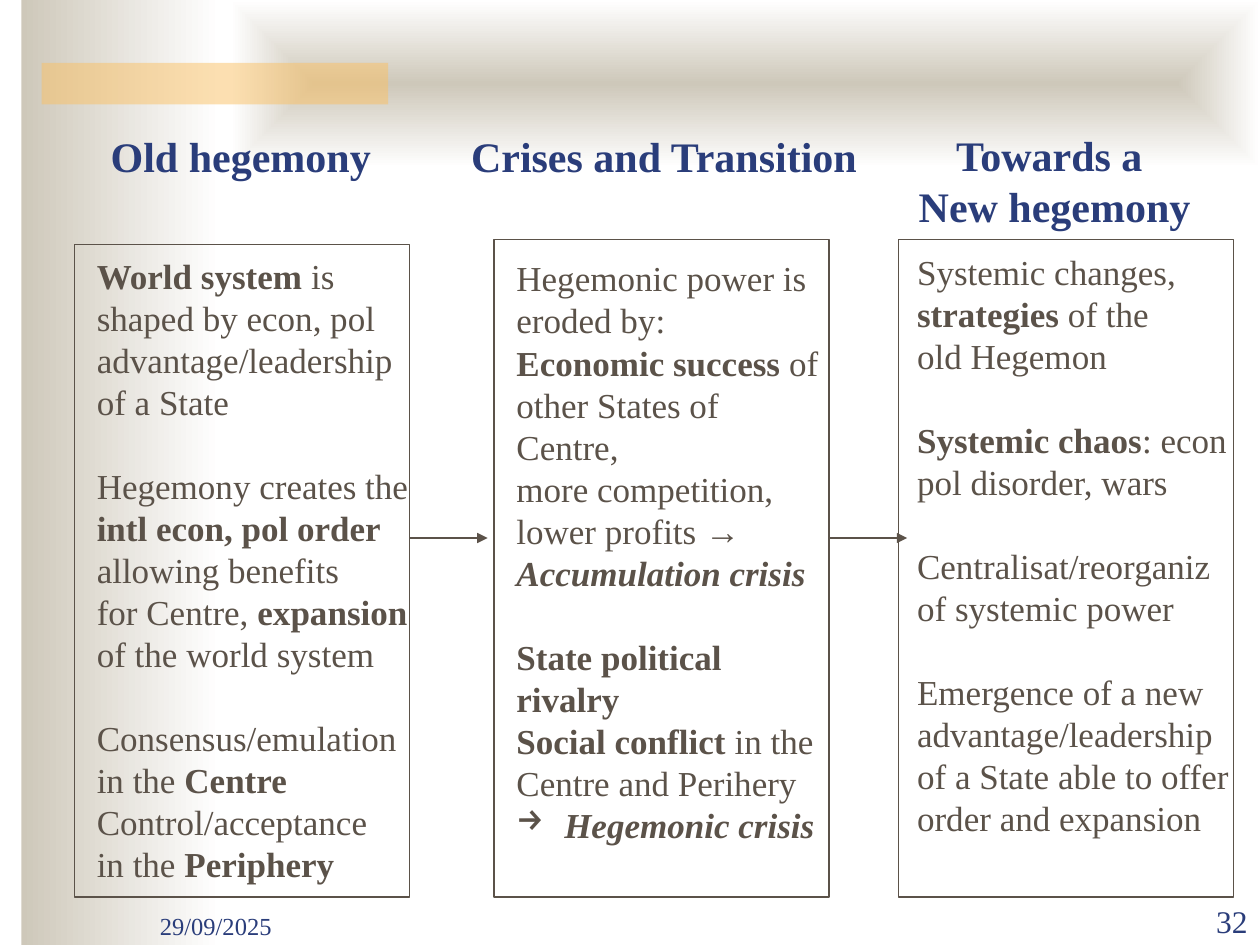
from lxml.etree import SubElement
from pptx import Presentation
from pptx.dml.color import RGBColor
from pptx.enum.shapes import MSO_CONNECTOR as CONNECTOR, MSO_SHAPE as SHAPE
from pptx.enum.text import MSO_ANCHOR as ANCHOR, MSO_AUTO_SIZE as AUTO_SIZE, PP_ALIGN as ALIGN
from pptx.oxml.ns import qn
from pptx.util import Inches, Pt

FONT = "Times New Roman"
NAVY = RGBColor(0x2A, 0x3D, 0x7A)
BROWN = RGBColor(0x5B, 0x52, 0x49)
STONE = RGBColor(0xCE, 0xC8, 0xBA)
WHITE = RGBColor(0xFF, 0xFF, 0xFF)
AMBER = RGBColor(0xFA, 0xC1, 0x64)

BULLET = "→ "
BULLET_INDENT = Inches(0.38)

# Each column is a list of groups of lines; *bold*, *~bold italic*
OLD_HEGEMONY = [
    ["*World system *is", "shaped by econ, pol", "advantage/leadership", "of a State"],
    ["Hegemony creates the", "*intl econ, pol order*", "allowing benefits",
     "for Centre, *expansion*", "of the world system"],
    ["Consensus/emulation", "in the *Centre*", "Control/acceptance", "in the *Periphery*"],
]
CRISES = [
    ["Hegemonic power is", "eroded by:", "*Economic success *of", "other States of Centre,",
     "more competition,", "lower profits →", "*~Accumulation crisis*"],
    ["*State political rivalry*", "*Social conflict *in the", "Centre and Perihery",
     BULLET + "*~Hegemonic crisis*"],
]
NEW_HEGEMONY = [
    ["Systemic changes,", "*strategies* of the", "old Hegemon"],
    ["*Systemic chaos*: econ", "pol disorder, wars"],
    ["Centralisat/reorganiz", "of systemic power"],
    ["Emergence of a new", "advantage/leadership", "of a State able to offer",
     "order and expansion"],
]


def add_panel(slide, at, line=None):
    panel = slide.shapes.add_shape(SHAPE.RECTANGLE, *map(Inches, at))
    panel.shadow.inherit = False
    panel.fill.background()
    if line is None:
        panel.line.fill.background()
    else:
        panel.line.color.rgb = line
        panel.line.width = Pt(0.75)
    return panel


def add_gradient(slide, at, from_centre=False):
    panel = add_panel(slide, at)
    panel.fill.gradient()
    panel.fill.gradient_angle = 0
    for stop, color in zip(panel.fill.gradient_stops, (STONE, WHITE)):
        stop.color.rgb = color
    if from_centre:
        grad = panel.element.spPr.find(qn("a:gradFill"))
        grad.remove(grad.find(qn("a:lin")))
        outline = SubElement(grad, qn("a:path"), {"path": "shape"})
        SubElement(outline, qn("a:fillToRect"), dict.fromkeys("ltrb", "50000"))


def add_accent_bar(slide, at):
    bar = add_panel(slide, at)
    bar.fill.solid()
    bar.fill.fore_color.rgb = AMBER
    color = bar.element.spPr.find(qn("a:solidFill"))[0]
    SubElement(color, qn("a:alpha"), {"val": "50000"})


def add_arrow(slide, start_x, end_x, y):
    arrow = slide.shapes.add_connector(
        CONNECTOR.STRAIGHT, Inches(start_x), Inches(y), Inches(end_x), Inches(y))
    arrow.line.color.rgb = BROWN
    arrow.line.width = Pt(0.75)
    SubElement(arrow.line._get_or_add_ln(), qn("a:tailEnd"), {"type": "triangle"})
    SubElement(arrow.element.spPr, qn("a:effectLst"))


def add_bullet(paragraph):
    properties = paragraph._p.get_or_add_pPr()
    properties.set("marL", str(BULLET_INDENT))
    properties.set("indent", str(-BULLET_INDENT))
    SubElement(properties, qn("a:buChar"), {"char": BULLET.strip()})


def add_text(slide, at, groups, size=20, color=BROWN, align=ALIGN.LEFT,
             anchor=ANCHOR.TOP, wrap=False, grow=True):
    box = slide.shapes.add_textbox(*map(Inches, at))
    frame = box.text_frame
    frame.word_wrap = wrap
    frame.auto_size = AUTO_SIZE.SHAPE_TO_FIT_TEXT if grow else AUTO_SIZE.NONE
    frame.vertical_anchor = anchor
    paragraph = None
    for group in groups:
        for index, line in enumerate(group):
            is_first = paragraph is None
            paragraph = frame.paragraphs[0] if is_first else frame.add_paragraph()
            if line.startswith(BULLET):
                add_bullet(paragraph)
                line = line.removeprefix(BULLET)
            paragraph.alignment = align
            if index == 0 and not is_first:
                paragraph.space_before = Pt(size * 1.2)
            for position, part in enumerate(line.split("*")):
                if not part:
                    continue
                run = paragraph.add_run()
                run.text = part.removeprefix("~")
                run.font.name = FONT
                run.font.size = Pt(size)
                run.font.color.rgb = color
                run.font.bold = position % 2 == 1
                run.font.italic = part.startswith("~")


def main():
    deck = Presentation()
    deck.slide_width, deck.slide_height = Inches(10), Inches(7.5)
    slide = deck.slides.add_slide(deck.slide_layouts[6])

    # Background decoration
    add_gradient(slide, (0.17, 0, 1.58, 7.5))
    add_gradient(slide, (1.83, 0, 8.17, 1.33), from_centre=True)
    add_accent_bar(slide, (0.33, 0.5, 2.75, 0.33))

    # Footer
    footer = dict(color=NAVY, anchor=ANCHOR.BOTTOM, wrap=True, grow=False)
    add_text(slide, (1.17, 7.01, 2.08, 0.5), [["29/09/2025"]], size=14, **footer)
    add_text(slide, (9, 7.01, 1, 0.5), [["32"]], size=18, align=ALIGN.RIGHT, **footer)

    # Column frames
    for left, top in ((0.59, 1.94), (3.92, 1.9), (7.13, 1.9)):
        add_panel(slide, (left, top, 2.66, 7.12 - top), line=BROWN)

    # Column headings
    heading = dict(size=24, color=NAVY)
    add_text(slide, (0.78, 0.99, 2.29, 0.5), [["*Old hegemony*"]], **heading)
    add_text(slide, (3.64, 0.99, 3.29, 0.5), [["*Crises and Transition*"]], **heading)
    add_text(slide, (7.18, 0.98, 2.38, 0.91), [["*Towards a *", "*New hegemony*"]],
             align=ALIGN.CENTER, **heading)

    # Column contents
    add_text(slide, (0.67, 1.97, 2.76, 5.15), OLD_HEGEMONY)
    add_text(slide, (4, 1.99, 2.61, 5.49), CRISES, wrap=True)
    add_text(slide, (7.18, 1.94, 2.69, 5.49), NEW_HEGEMONY)

    # Arrows between columns
    for start_x in (3.25, 6.58):
        add_arrow(slide, start_x, start_x + 0.62, 4.27)

    deck.save("out.pptx")


if __name__ == "__main__":
    main()
